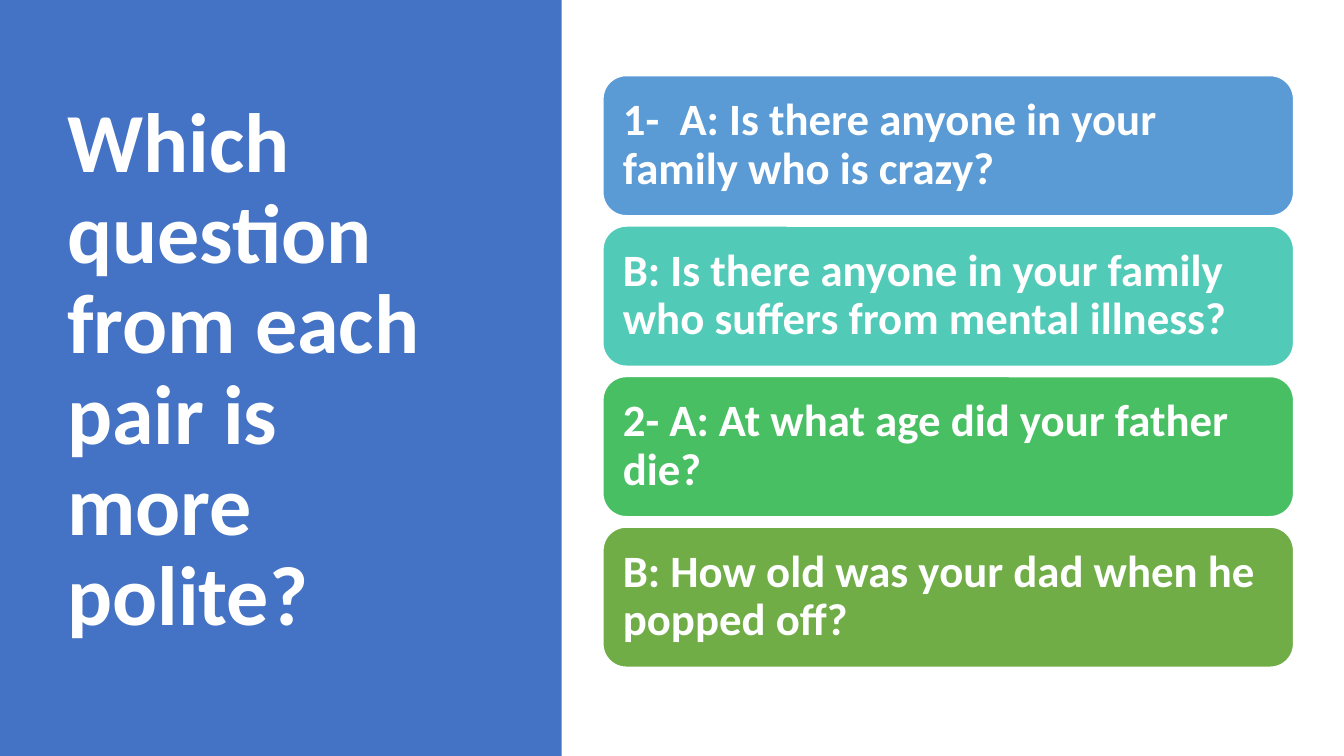
"""Build a slide that asks which question of each pair is more polite."""
import pptx
import pptx.dml.color
import pptx.enum.shapes
import pptx.enum.text
import pptx.util

RGB = pptx.dml.color.RGBColor
KIND = pptx.enum.shapes.MSO_SHAPE
WIDE, HIGH = 13.33, 7.5
LEFT, TOP, STEP = 5.98, 0.75, 1.493
CARD_W, CARD_H = 6.85, 1.39
WHITE = RGB(0xFF, 0xFF, 0xFF)
BLUE = RGB(0x44, 0x72, 0xC4)
SKY = RGB(0x5B, 0x9B, 0xD5)
TEAL = RGB(0x52, 0xCA, 0xB8)
GREEN = RGB(0x49, 0xBF, 0x64)
OLIVE = RGB(0x70, 0xAD, 0x47)
CARDS = [
    ("1-  A: Is there anyone in your family who is crazy?", SKY),
    ("B: Is there anyone in your family who suffers from mental illness?", TEAL),
    ("2- A: At what age did your father die?", GREEN),
    ("B: How old was your dad when he popped off?", OLIVE),
]


def inches(*sizes):
    """Turn numbers into lengths."""
    return [pptx.util.Inches(size) for size in sizes]


def write(shape, text, size, pad=None):
    """Set bold white text in the middle of a shape, from the left."""
    frame = shape.text_frame
    frame.word_wrap = True
    frame.vertical_anchor = pptx.enum.text.MSO_ANCHOR.MIDDLE
    if pad is not None:
        frame.margin_left, frame.margin_top = inches(pad, pad)
        frame.margin_right, frame.margin_bottom = inches(pad, pad)
    para = frame.paragraphs[0]
    para.alignment = pptx.enum.text.PP_ALIGN.LEFT
    para.line_spacing = 0.9
    run = para.add_run()
    run.text = text
    run.font.name = "Calibri"
    run.font.size = pptx.util.Pt(size)
    run.font.bold = True
    run.font.color.rgb = WHITE


def block(slide, kind, place, fill, line=None):
    """Add a filled shape, with an outline if a colour is given."""
    shape = slide.shapes.add_shape(kind, *inches(*place))
    shape.shadow.inherit = False
    shape.fill.solid()
    shape.fill.fore_color.rgb = fill
    if line is None:
        shape.line.fill.background()
    else:
        shape.line.color.rgb = line
        shape.line.width = pptx.util.Pt(1)
    return shape


def main():
    """Draw the title panel and the column of question cards."""
    deck = pptx.Presentation()
    deck.slide_width, deck.slide_height = inches(WIDE, HIGH)
    slide = deck.slides.add_slide(deck.slide_layouts[6])
    block(slide, KIND.RECTANGLE, (0, 0, 5.57, HIGH), BLUE)
    title = slide.shapes.add_textbox(*inches(0.57, 0.68, 4.16, 6.02))
    write(title, "Which question from each pair is more polite?", size=60)
    for row, (text, fill) in enumerate(CARDS):
        place = (LEFT, TOP + row * STEP, CARD_W, CARD_H)
        card = block(slide, KIND.ROUNDED_RECTANGLE, place, fill, line=WHITE)
        write(card, text, size=32, pad=0.13)
    deck.save("out.pptx")


if __name__ == "__main__":
    main()
